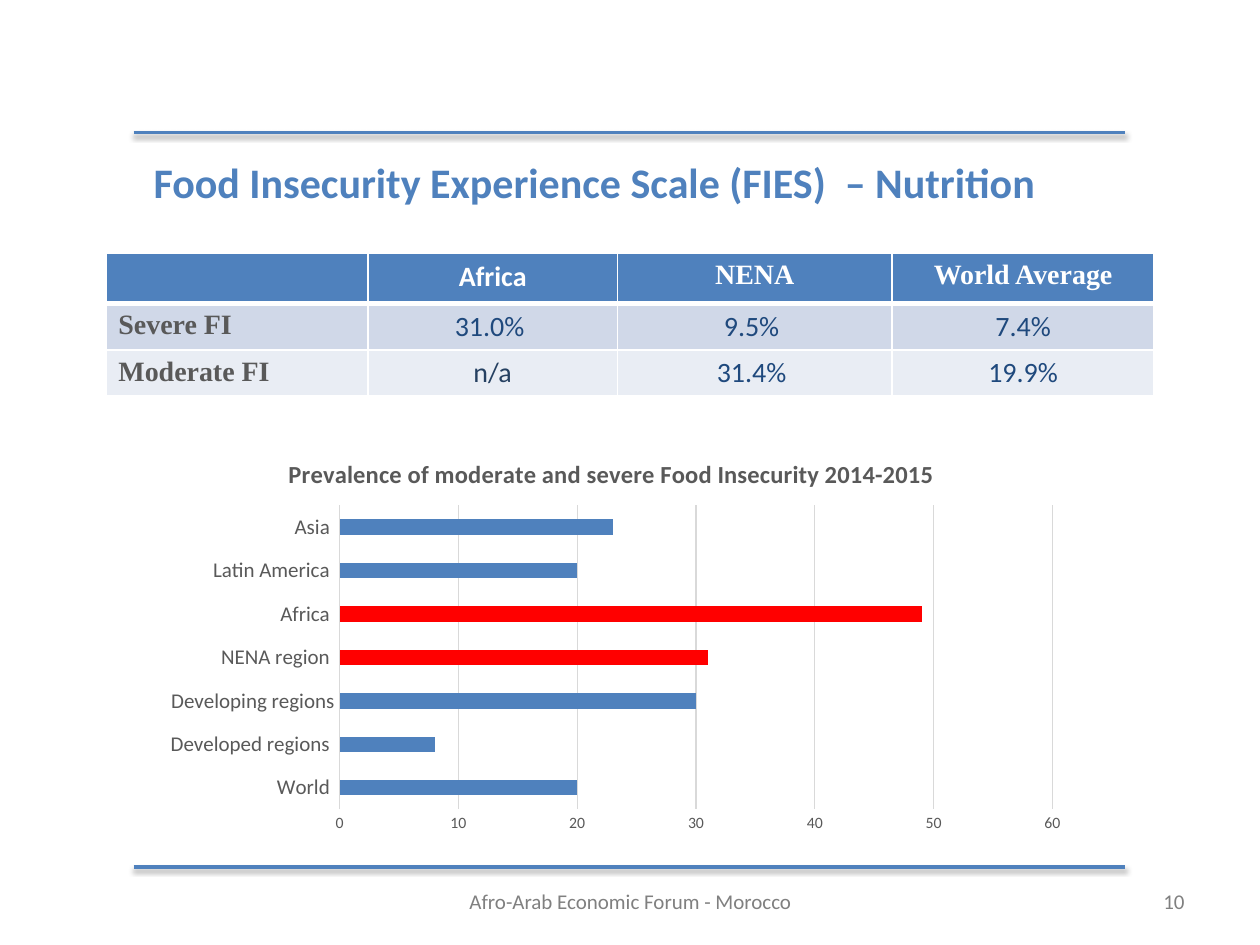
import pptx
import pptx.chart.data
import pptx.dml.color
import pptx.enum.chart
import pptx.enum.shapes
import pptx.enum.text
import pptx.oxml
import pptx.oxml.ns
import pptx.util

Inches = pptx.util.Inches
Pt = pptx.util.Pt
ALIGN = pptx.enum.text.PP_ALIGN
ANCHOR = pptx.enum.text.MSO_ANCHOR
NS = pptx.oxml.ns.nsdecls("a", "c")
BLUE, NAVY, GRAY, RULE = "4F81BD", "1F497D", "595959", "D9D9D9"


def rgb(value):
    return pptx.dml.color.RGBColor.from_string(value)


def set_font(font, size, color, bold=False, name="Calibri"):
    font.name, font.size, font.bold = name, Pt(size), bold
    font.color.rgb = rgb(color)


def write(tf, text, size=12, color="808080", bold=False, name="Calibri",
          align=ALIGN.LEFT, anchor=ANCHOR.TOP):
    tf.word_wrap = True
    tf.vertical_anchor = anchor
    p = tf.paragraphs[0]
    p.alignment = align
    r = p.add_run()
    r.text = text
    set_font(r.font, size, color, bold, name)


def add_text(s, box, text, **fmt):
    sp = s.shapes.add_textbox(*map(Inches, box))
    write(sp.text_frame, text, **fmt)


def add_rule(s, x, y, w):
    line = s.shapes.add_connector(
        pptx.enum.shapes.MSO_CONNECTOR.STRAIGHT,
        Inches(x), Inches(y), Inches(x + w), Inches(y))
    line.line.color.rgb = rgb(BLUE)
    line.line.width = Pt(2)
    line._element.spPr.append(pptx.oxml.parse_xml(
        f'<a:effectLst {NS}><a:outerShdw blurRad="{Pt(3.1)}" dist="{Pt(1.6)}" '
        'dir="5400000" rotWithShape="0"><a:srgbClr val="000000">'
        '<a:alpha val="38000"/></a:srgbClr></a:outerShdw></a:effectLst>'))


def add_borders(cell, **widths):
    for side in "LRTB":
        cell._tc.get_or_add_tcPr().append(pptx.oxml.parse_xml(
            f'<a:ln{side} {NS} w="{Pt(widths.get(side, 1))}"><a:solidFill>'
            f'<a:srgbClr val="FFFFFF"/></a:solidFill></a:ln{side}>'))


def add_scale_table(s, box, col_widths):
    rows = [["", "Africa", "NENA", "World Average"],
            ["Severe FI", "31.0% ", "9.5% ", "7.4%"],
            ["Moderate FI", "n/a", "31.4% ", "19.9%"]]
    fills = [BLUE, "D0D8E8", "E9EDF4"]
    table = s.shapes.add_table(len(rows), len(col_widths), *map(Inches, box)).table
    for column, width in zip(table.columns, col_widths):
        column.width = Inches(width)
    for i, row in enumerate(rows):
        table.rows[i].height = Inches(box[3] / len(rows))
        for j, text in enumerate(row):
            cell = table.cell(i, j)
            add_borders(cell, **({"B": 3} if i == 0 else {"T": 3} if i == 1 else {}))
            cell.fill.solid()
            cell.fill.fore_color.rgb = rgb(fills[i])
            if not text:
                continue
            header = i == 0
            serif = j == 0 or header and j > 1
            color = ("FFFFFF" if header else GRAY if j == 0
                     else "254061" if text == "n/a" else NAVY)
            write(cell.text_frame, text, size=16, color=color,
                  bold=header or j == 0,
                  name="Times New Roman" if serif else "Calibri",
                  align=ALIGN.CENTER if j else ALIGN.LEFT)


def layout_xml(target="", **values):
    inner = f'<c:layoutTarget val="{target}"/>' if target else ""
    inner += "".join(f'<c:{key}Mode val="edge"/>' for key in "xy")
    inner += "".join(f'<c:{key} val="{value}"/>' for key, value in values.items())
    return pptx.oxml.parse_xml(
        f"<c:layout {NS}><c:manualLayout>{inner}</c:manualLayout></c:layout>")


def place(element, layout, index):
    for old in element.findall(pptx.oxml.ns.qn("c:layout")):
        element.remove(old)
    element.insert(index, layout)


def add_prevalence_chart(s, box):
    data = pptx.chart.data.CategoryChartData()
    data.categories = ["World ", "Developed regions ", "Developing regions",
                       "NENA region ", "Africa ", "Latin America ", "Asia "]
    data.add_series("Series 1", [20, 8, 30, 31, 49, 20, 23])
    chart = s.shapes.add_chart(pptx.enum.chart.XL_CHART_TYPE.BAR_CLUSTERED,
                               *map(Inches, box), data).chart
    set_font(chart.font, 10, "000000")
    chart.has_legend = False
    chart.has_title = True
    write(chart.chart_title.text_frame,
          "Prevalence of moderate and severe Food Insecurity 2014-2015",
          size=14, color=GRAY, bold=True, align=ALIGN.CENTER)
    place(chart.chart_title._element, layout_xml(x=0.17, y=0.05), 1)
    plot_area = chart._chartSpace.chart.plotArea
    place(plot_area, layout_xml("inner", x=0.223, y=0.178, w=0.68, h=0.738), 0)

    plot = chart.plots[0]
    plot.vary_by_categories = False
    plot.gap_width = 182
    series = plot.series[0]
    bars = [(series, BLUE)] + [(series.points[i], "FF0000") for i in (3, 4)]
    for bar, color in bars:
        bar.format.fill.solid()
        bar.format.fill.fore_color.rgb = rgb(color)

    cat, val = chart.category_axis, chart.value_axis
    for axis, size in ((cat, 12), (val, 9)):
        axis.major_tick_mark = pptx.enum.chart.XL_TICK_MARK.NONE
        axis.minor_tick_mark = pptx.enum.chart.XL_TICK_MARK.NONE
        set_font(axis.tick_labels.font, size, GRAY)
    val.minimum_scale, val.maximum_scale, val.major_unit = 0, 60, 10
    val.has_major_gridlines = True
    val.format.line.fill.background()
    for line in (cat.format.line, val.major_gridlines.format.line):
        line.color.rgb = rgb(RULE)
        line.width = Pt(0.75)


def add_footer(s, y, h):
    add_text(s, (3.42, y, 3.17, h), "Afro-Arab Economic Forum - Morocco",
             align=ALIGN.CENTER, anchor=ANCHOR.MIDDLE)
    add_text(s, (7.17, y, 2.33, h), "10", align=ALIGN.RIGHT, anchor=ANCHOR.MIDDLE)


def main():
    prs = pptx.Presentation()
    prs.slide_width, prs.slide_height = Inches(10), Inches(7.5)
    s = prs.slides.add_slide(prs.slide_layouts[6])
    for y in (1.05, 6.88):
        add_rule(s, 1.06, y, 7.87)
    add_prevalence_chart(s, (0.84, 3.43, 8.32, 3.27))
    add_footer(s, 6.95, 0.4)
    add_scale_table(s, (0.84, 2.01, 8.32, 1.1), (2.08, 1.98, 2.18, 2.08))
    add_text(s, (1.12, 1.19, 8.49, 0.5),
             "Food Insecurity Experience Scale (FIES)  – Nutrition",
             size=24, color=BLUE, bold=True)
    prs.save("out.pptx")


if __name__ == "__main__":
    main()
